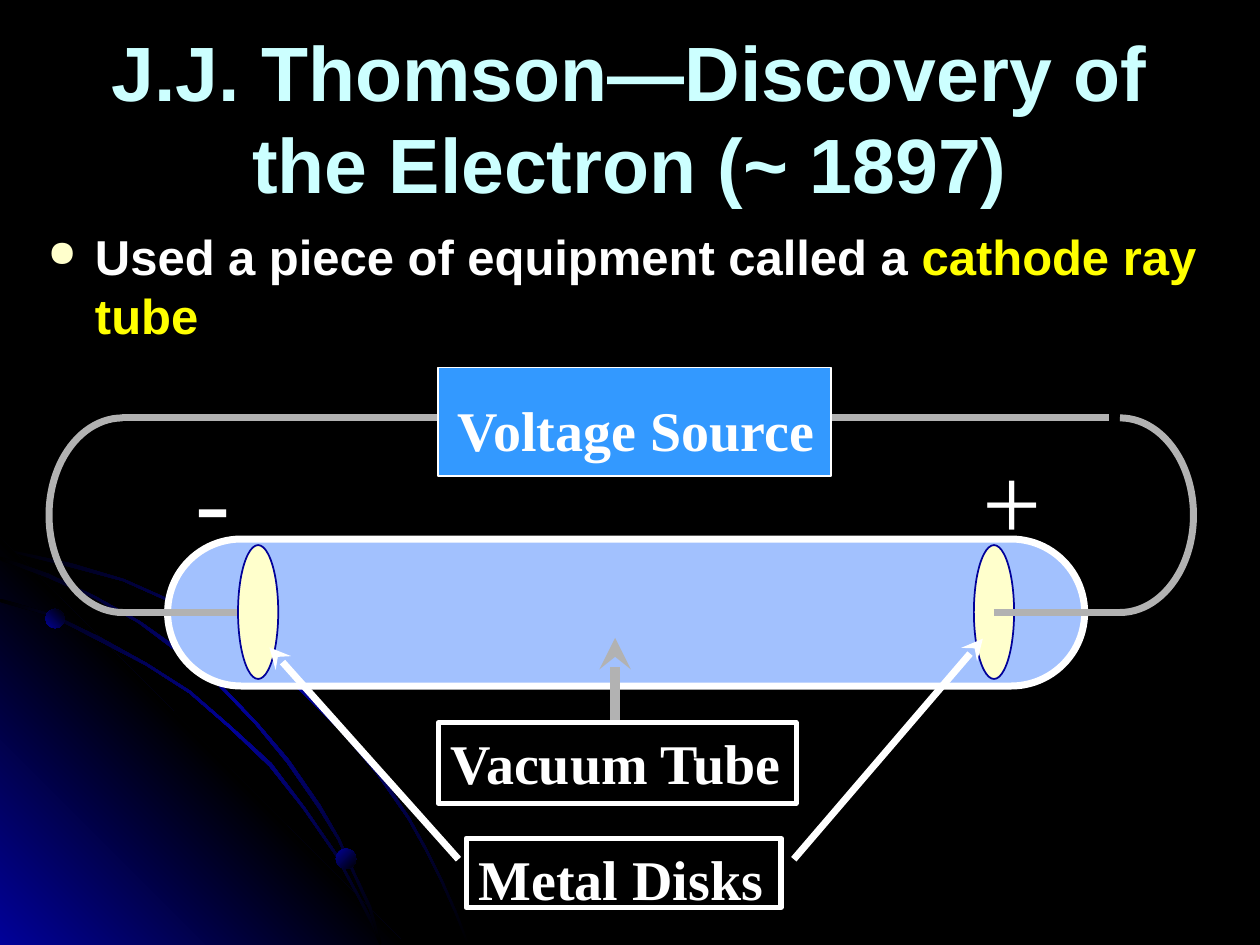
from lxml.etree import SubElement
from pptx import Presentation
from pptx.dml.color import RGBColor
from pptx.enum.shapes import MSO_CONNECTOR, MSO_SHAPE
from pptx.enum.text import MSO_ANCHOR, PP_ALIGN
from pptx.oxml.ns import qn
from pptx.util import Pt

WHITE, BLACK, NAVY = "FFFFFF", "000000", "010199"
CREAM, GRAY = "FFFFCC", "B2B2B2"
SERIF = "Times New Roman"


def paint(sp, fill=None, line=None, width=1, angle=0):
    """Fill with one hex colour, or with a gradient when given a list."""
    sp.shadow.inherit = False
    if isinstance(fill, list):
        sp.fill.gradient()
        sp.fill.gradient_angle = -angle % 360
        stops = sp._element.spPr.find(qn("a:gradFill")).find(qn("a:gsLst"))
        for gs in list(stops):
            stops.remove(gs)
        for i, color in enumerate(fill):
            gs = SubElement(stops, qn("a:gs"), pos=str(i * 100000 // (len(fill) - 1)))
            SubElement(gs, qn("a:srgbClr"), val=color)
    elif fill:
        sp.fill.solid()
        sp.fill.fore_color.rgb = RGBColor.from_string(fill)
    else:
        sp.fill.background()
    if line:
        sp.line.color.rgb = RGBColor.from_string(line)
        sp.line.width = Pt(width)
    else:
        sp.line.fill.background()


def style(r, name, size, color, bold=True):
    r.font.name, r.font.size, r.font.bold = name, Pt(size), bold
    r.font.color.rgb = RGBColor.from_string(color)


prs = Presentation()
prs.slide_width, prs.slide_height = Pt(720), Pt(540)
s = prs.slides.add_slide(prs.slide_layouts[5])
s.background.fill.solid()
s.background.fill.fore_color.rgb = RGBColor.from_string(BLACK)

# Backdrop: thin orbit ribbons, each given by its upper edge, over a corner glow
orbits = [
    [(0, 313), (41, 322), (71, 331), (98, 343), (125, 358), (150, 375), (174, 395),
     (196, 416), (216, 440), (234, 467), (244, 485), (253, 503), (261, 521), (268, 539)],
    [(0, 342), (30, 351), (57, 364), (84, 379), (109, 395), (132, 415), (155, 436),
     (174, 461), (192, 487), (206, 513), (213, 526), (218, 539)],
    [(0, 318), (28, 328), (55, 341), (80, 355), (104, 372), (126, 391), (147, 413),
     (165, 434), (183, 460), (194, 479), (203, 499), (212, 518), (218, 539)],
]
glow = [(232, 540), (0, 540), (0, 307)]
ribbons = [e + [(max(x - 1, 0), min(y + 1.5, 540)) for x, y in reversed(e)] for e in orbits]
outlines = [
    (ribbons[0], [BLACK, NAVY, BLACK], 45),
    (glow, [NAVY, BLACK, NAVY], 315),
    (ribbons[1], [BLACK, NAVY, BLACK], 45),
    (ribbons[2], [BLACK, NAVY, BLACK], 45),
]
for points, colors, angle in outlines:
    fb = s.shapes.build_freeform(*points[0], scale=Pt(1))
    fb.add_line_segments(points[1:])
    paint(fb.convert_to_shape(), colors, angle=angle)
for x, y, d, angle in [(26, 348, 11, 315), (192, 485, 11.5, 45)]:
    paint(s.shapes.add_shape(MSO_SHAPE.OVAL, Pt(x), Pt(y), Pt(d), Pt(d)),
          [NAVY, BLACK], angle=angle)

# Title and bullet
title = s.shapes.title
title.left, title.top, title.width, title.height = Pt(36), Pt(21.6), Pt(648), Pt(90)
tf = title.text_frame
tf.text = "J.J. Thomson—Discovery of the Electron (~ 1897)"
tf.vertical_anchor = MSO_ANCHOR.MIDDLE
tf.paragraphs[0].alignment = PP_ALIGN.CENTER
style(tf.paragraphs[0].runs[0], "Arial", 44, "CCFFFF")

tf = s.shapes.add_textbox(Pt(20.2), Pt(126), Pt(671.8), Pt(90)).text_frame
tf.word_wrap = True
p = tf.paragraphs[0]
p.space_before = Pt(5.6)
for text, color in [("Used a piece of equipment called a ", WHITE),
                    ("cathode ray tube", "FFFF00")]:
    r = p.add_run()
    r.text = text
    style(r, "Arial", 28, color)
pPr = p._p.get_or_add_pPr()
pPr.set("marL", str(Pt(27)))
pPr.set("indent", str(-Pt(27)))
SubElement(SubElement(pPr, qn("a:buClr")), qn("a:srgbClr"), val=CREAM)
SubElement(pPr, qn("a:buSzPct"), val="75000")
SubElement(pPr, qn("a:buChar"), char="●")

# Cathode ray tube, its disks, wires and voltage source, from back to front
tube = s.shapes.add_shape(MSO_SHAPE.ROUNDED_RECTANGLE, Pt(95.8), Pt(308), Pt(524), Pt(84))
tube.adjustments[0] = 0.5
paint(tube, "A2C1FE", WHITE, 4)

parts = [
    ("disk", 556.5), ("wire", (142, 350), (70, 350)), ("wire", (568, 350), (640, 350)),
    ("wire", (70, 238.5), (634, 238.5)), ("disk", 136),
]
arrows = [
    ("arrow", (351.5, 412.5), (351.5, 364.5), GRAY, 6),
    ("arrow", (262, 491), (154, 370), WHITE, 4),
    ("arrow", (453.6, 491), (561.6, 365), WHITE, 4),
]
for kind, start, *rest in parts + arrows:
    if kind == "disk":
        disk = s.shapes.add_shape(MSO_SHAPE.OVAL, Pt(start), Pt(311.5), Pt(23), Pt(76.5))
        paint(disk, CREAM, NAVY)
        continue
    end, color, width = rest if kind == "arrow" else (rest[0], GRAY, 4)
    cn = s.shapes.add_connector(MSO_CONNECTOR.STRAIGHT, *map(Pt, start + end))
    cn.line.color.rgb = RGBColor.from_string(color)
    cn.line.width = Pt(width)
    if kind == "arrow":
        SubElement(cn.line._get_or_add_ln(), qn("a:tailEnd"), type="stealth")
    SubElement(cn._element.spPr, qn("a:effectLst"))

# Arc angles are in units of 100000/60000 degrees
for center, start, end in [(70, 90, 270), (640, 270, 90)]:
    arc = s.shapes.add_shape(MSO_SHAPE.ARC, Pt(center - 42), Pt(238.8), Pt(84), Pt(111.2))
    arc.adjustments[0], arc.adjustments[1] = start * 0.6, end * 0.6
    paint(arc, None, GRAY, 4)

source = s.shapes.add_shape(MSO_SHAPE.RECTANGLE, Pt(250.5), Pt(210), Pt(224.5), Pt(62))
paint(source, "3399FF", WHITE)

# Labels
labels = [
    ("Voltage Source", 254.5, 222.5, 220, 46, 32, False),
    ("+", 554.5, 245.5, 48, 64, 60, False),
    ("-", 104.5, 244, 34.5, 64, 60, False),
    ("Vacuum Tube", 250.5, 413, 204.5, 46, 32, True),
    ("Metal Disks", 266.4, 479, 180, 39.6, 32, True),
]
for text, x, y, w, h, size, framed in labels:
    box = tuple(map(Pt, (x, y, w, h)))
    if framed:
        sp = s.shapes.add_shape(MSO_SHAPE.RECTANGLE, *box)
        paint(sp, None, WHITE, 3)
    else:
        sp = s.shapes.add_textbox(*box)
    tf = sp.text_frame
    tf.text = text
    tf.word_wrap = False
    tf.vertical_anchor = MSO_ANCHOR.TOP
    tf.paragraphs[0].alignment = PP_ALIGN.LEFT
    style(tf.paragraphs[0].runs[0], SERIF, size, WHITE, size == 32)

prs.save("out.pptx")
